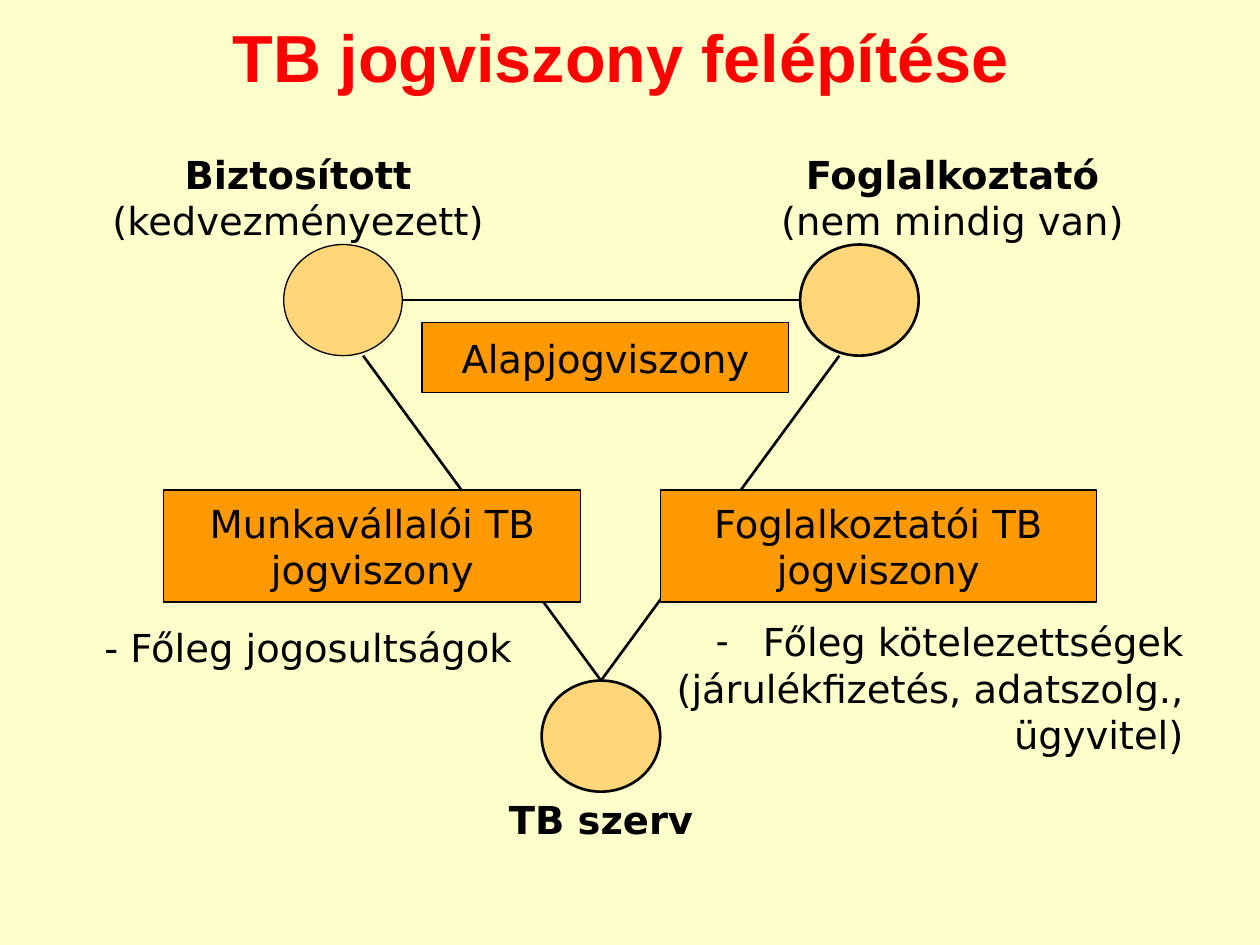
from dataclasses import dataclass

from lxml import etree
from pptx import Presentation
from pptx.dml.color import RGBColor
from pptx.enum.shapes import MSO_CONNECTOR, MSO_SHAPE
from pptx.enum.text import MSO_ANCHOR, MSO_AUTO_SIZE, PP_ALIGN
from pptx.oxml.ns import qn
from pptx.util import Cm, Pt

STRAIGHT = MSO_CONNECTOR.STRAIGHT
OVAL, RECTANGLE = MSO_SHAPE.OVAL, MSO_SHAPE.RECTANGLE
LEFT, CENTER, RIGHT = PP_ALIGN.LEFT, PP_ALIGN.CENTER, PP_ALIGN.RIGHT
MIDDLE, TOP = MSO_ANCHOR.MIDDLE, MSO_ANCHOR.TOP
NO_AUTOFIT = MSO_AUTO_SIZE.NONE


@dataclass(frozen=True)
class Theme:
    background: RGBColor = RGBColor(0xFF, 0xFF, 0xCC)
    heading: RGBColor = RGBColor(0xFF, 0x00, 0x00)
    ink: RGBColor = RGBColor(0x00, 0x00, 0x00)
    accent: RGBColor = RGBColor(0xFF, 0x99, 0x00)
    heading_font: str = "Arial"
    text_font: str = "DejaVu Sans"
    heading_size: Pt = Pt(38)
    text_size: Pt = Pt(22)
    thin: Pt = Pt(0.75)
    thick: Pt = Pt(1.5)
    party_opacity: int = 40


THEME = Theme()
PARTY_WIDTH, PARTY_HEIGHT = 2.39, 2.24
LABEL_HEIGHT = 0.99
BULLET_INDENT = Cm(0.95)


def place(shape, left, top, width, height):
    shape.left, shape.top = Cm(left), Cm(top)
    shape.width, shape.height = Cm(width), Cm(height)


def write(frame, lines, align, bold_first=False, anchor=TOP):
    """Fill a text frame with one paragraph per line."""
    frame.word_wrap = True
    frame.auto_size = NO_AUTOFIT
    frame.vertical_anchor = anchor
    for index, line in enumerate(lines):
        paragraph = frame.add_paragraph() if index else frame.paragraphs[0]
        paragraph.text = line
        paragraph.alignment = align
        paragraph.space_before = Pt(0)
        font = paragraph.font
        font.name, font.size = THEME.text_font, THEME.text_size
        font.color.rgb = THEME.ink
        font.bold = bold_first and index == 0


def set_bullet(paragraph, bullet=None):
    properties = paragraph._p.get_or_add_pPr()
    indent = BULLET_INDENT if bullet else 0
    properties.set("marL", str(indent))
    properties.set("indent", str(-indent))
    if bullet:
        etree.SubElement(properties, qn("a:buChar")).set("char", bullet)
    else:
        etree.SubElement(properties, qn("a:buNone"))
    # The default run properties must follow the bullet
    properties.append(properties.find(qn("a:defRPr")))


def add_title(slide, text):
    title = slide.shapes.title
    place(title, 1.09, -0.08, 22.86, 2.41)
    write(title.text_frame, [text], CENTER, anchor=MIDDLE)
    font = title.text_frame.paragraphs[0].font
    font.name, font.size = THEME.heading_font, THEME.heading_size
    font.color.rgb, font.bold = THEME.heading, True


def fill_list(body, box, lines, align, bullets):
    place(body, *box)
    write(body.text_frame, lines, align)
    for paragraph, bullet in zip(body.text_frame.paragraphs, bullets):
        set_bullet(paragraph, bullet)


def add_filled(slide, kind, box, outline):
    shape = slide.shapes.add_shape(kind, *map(Cm, box))
    shape.shadow.inherit = False
    shape.fill.solid()
    shape.fill.fore_color.rgb = THEME.accent
    shape.line.color.rgb = THEME.ink
    shape.line.width = outline
    return shape


def add_party(slide, left, top, outline):
    party = add_filled(slide, OVAL, (left, top, PARTY_WIDTH, PARTY_HEIGHT), outline)
    color = party.fill._xPr.find(qn("a:solidFill"))[0]
    etree.SubElement(color, qn("a:alpha")).set("val", str(THEME.party_opacity * 1000))


def add_relation(slide, box, text):
    relation = add_filled(slide, RECTANGLE, box, THEME.thin)
    write(relation.text_frame, [text], CENTER, anchor=MIDDLE)


def add_label(slide, left, top, width, lines):
    label = slide.shapes.add_textbox(Cm(left), Cm(top), Cm(width), Cm(LABEL_HEIGHT))
    write(label.text_frame, lines, CENTER, bold_first=True)


def add_link(slide, *ends):
    link = slide.shapes.add_connector(STRAIGHT, *map(Cm, ends))
    link.line.color.rgb = THEME.ink
    link.line.width = THEME.thick
    etree.SubElement(link._element.spPr, qn("a:effectLst"))


def main():
    presentation = Presentation()
    presentation.slide_width, presentation.slide_height = Cm(25.4), Cm(19.05)
    two_content = presentation.slide_layouts[3]
    slide = presentation.slides.add_slide(two_content)
    slide.background.fill.solid()
    slide.background.fill.fore_color.rgb = THEME.background

    add_title(slide, "TB jogviszony felépítése")

    # Triangle of the three parties
    insured_left, employer_left, agency_left = 5.72, 16.13, 10.92
    upper_top, agency_top = 4.93, 13.72
    upper_middle = upper_top + PARTY_HEIGHT / 2
    upper_bottom = upper_top + PARTY_HEIGHT
    agency_middle = agency_left + PARTY_WIDTH / 2
    add_link(slide, 7.32, upper_bottom, agency_middle, agency_top)
    add_link(slide, 16.92, upper_bottom, agency_middle, agency_top)
    add_link(slide, insured_left + PARTY_WIDTH, upper_middle, employer_left, upper_middle)
    add_party(slide, insured_left, upper_top, THEME.thin)
    add_party(slide, employer_left, upper_top, THEME.thick)
    add_party(slide, agency_left, agency_top, THEME.thick)

    # Names of the parties
    add_label(slide, 1.3, 2.92, 9.42, ["Biztosított", "(kedvezményezett)"])
    add_label(slide, 14.3, 2.92, 9.8, ["Foglalkoztató", "(nem mindig van)"])
    add_label(slide, 7.72, 15.93, 8.79, ["TB szerv"])

    # Legal relations on the sides of the triangle
    add_relation(slide, (8.51, 6.5, 7.39, 1.42), "Alapjogviszony")
    add_relation(slide, (3.3, 9.88, 8.41, 2.26), "Munkavállalói TB jogviszony")
    add_relation(slide, (13.31, 9.88, 8.79, 2.26), "Foglalkoztatói TB jogviszony")

    # Content of the two TB relations
    rights, duties = slide.placeholders[1], slide.placeholders[2]
    fill_list(rights, (1.85, 12.45, 9.42, 4.83), ["- Főleg jogosultságok"], LEFT, [None])
    fill_list(duties, (13.31, 12.34, 10.8, 4.83),
              ["Főleg kötelezettségek", "(járulékfizetés, adatszolg., ügyvitel)"],
              RIGHT, ["-", None])

    presentation.save("out.pptx")


if __name__ == "__main__":
    main()
